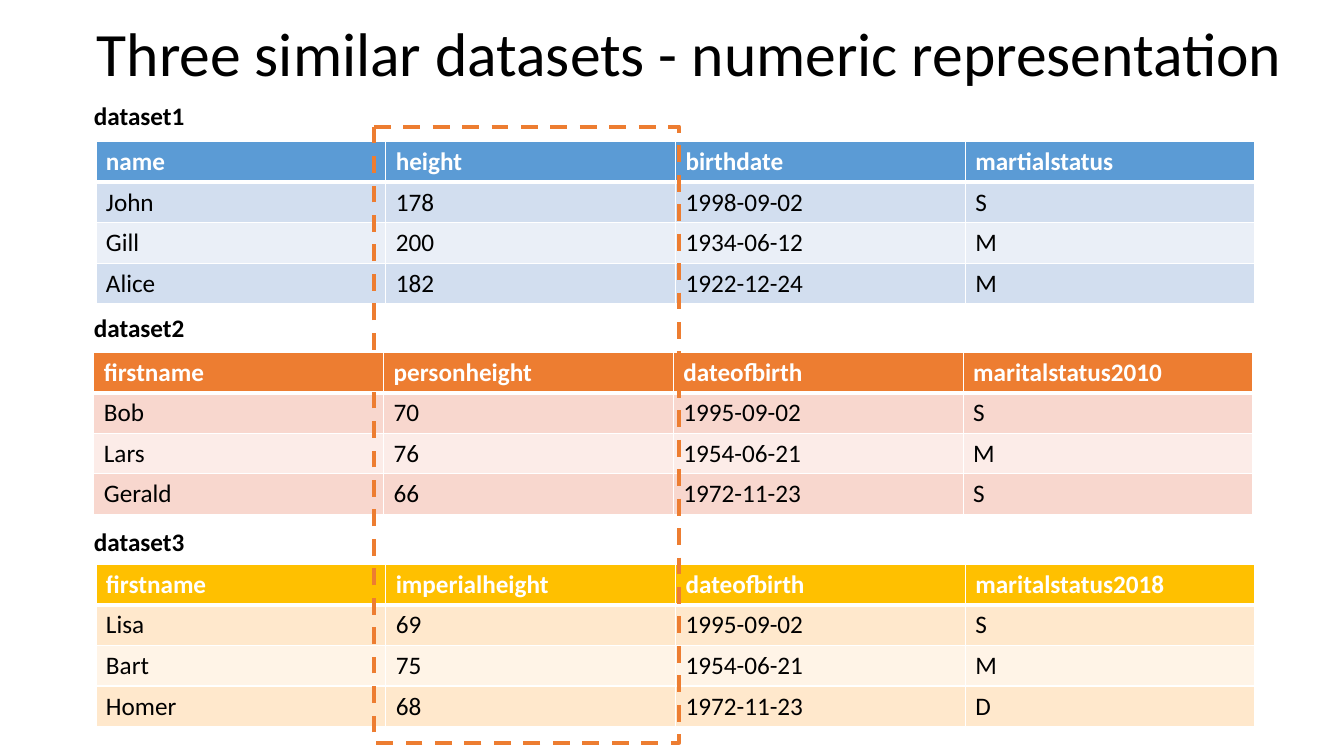
from lxml.etree import SubElement
from pptx import Presentation
from pptx.dml.color import RGBColor as RGB
from pptx.enum.dml import MSO_LINE as Dash
from pptx.enum.shapes import MSO_SHAPE as Shape
from pptx.enum.text import MSO_ANCHOR as Anchor
from pptx.oxml.ns import qn
from pptx.util import Pt

PX = 6350  # EMU, so the slide is 1920 x 1080 px
COL, ROW = 414, 58

WHITE, BLACK = RGB(255, 255, 255), RGB(0, 0, 0)
BLUE, BLUE_MID, BLUE_PALE = RGB(0x5B, 0x9B, 0xD5), RGB(0xD2, 0xDE, 0xEF), RGB(0xEA, 0xEF, 0xF7)
ORANGE, ORANGE_MID, ORANGE_PALE = RGB(0xED, 0x7D, 0x31), RGB(0xF8, 0xD7, 0xCE), RGB(0xFC, 0xEC, 0xE8)
GOLD, GOLD_MID, GOLD_PALE = RGB(0xFF, 0xC0, 0), RGB(0xFF, 0xE8, 0xCC), RGB(0xFF, 0xF4, 0xE7)

# label, label top, table left, table top, header and band colours, rows
SETS = [
    ("dataset1", 138, 137, 202, (BLUE, BLUE_MID, BLUE_PALE), [
        ("name", "height", "birthdate", "martialstatus"),
        ("John", "178", "1998-09-02", "S"),
        ("Gill", "200", "1934-06-12", "M"),
        ("Alice", "182", "1922-12-24", "M")]),
    ("dataset2", 441, 134, 503, (ORANGE, ORANGE_MID, ORANGE_PALE), [
        ("firstname", "personheight", "dateofbirth", "maritalstatus2010"),
        ("Bob", "70", "1995-09-02", "S"),
        ("Lars", "76", "1954-06-21", "M"),
        ("Gerald", "66", "1972-11-23", "S")]),
    ("dataset3", 747, 137, 806, (GOLD, GOLD_MID, GOLD_PALE), [
        ("firstname", "imperialheight", "dateofbirth", "maritalstatus2018"),
        ("Lisa", "69", "1995-09-02", "S"),
        ("Bart", "75", "1954-06-21", "M"),
        ("Homer", "68", "1972-11-23", "D")]),
]


class Deck:
    font = "Calibri"

    def __init__(self, wide, high):
        self.prs = Presentation()
        self.prs.slide_width, self.prs.slide_height = wide * PX, high * PX
        self.slide = self.prs.slides.add_slide(self.prs.slide_layouts[6])

    def box(self, *sides):
        return [side * PX for side in sides]

    def style(self, para, text, size, color, bold=False):
        para.text = text
        font = para.font
        font.name, font.size, font.bold = self.font, Pt(size), bold
        font.color.rgb = color

    def edge(self, cell, top, bottom):
        """Give the cell white borders, with top and bottom widths in points."""
        props = cell._tc.get_or_add_tcPr()
        for side, width in (("L", 1), ("R", 1), ("T", top), ("B", bottom)):
            line = SubElement(props, qn("a:ln" + side), w=str(Pt(width)))
            fill = SubElement(line, qn("a:solidFill"))
            SubElement(fill, qn("a:srgbClr"), val=str(WHITE))

    def grid(self, left, top, rows):
        """Add a plain table and yield its cells with row number and text."""
        cols = len(rows[0])
        spot = self.box(left, top, cols * COL, len(rows) * ROW)
        table = self.slide.shapes.add_table(len(rows), cols, *spot).table
        table.first_row = table.horz_banding = False
        for r, row in enumerate(rows):
            for c, text in enumerate(row):
                yield table.cell(r, c), r, text

    def table(self, left, top, colors, rows):
        head, mid, pale = colors
        for cell, r, text in self.grid(left, top, rows):
            self.edge(cell, 3 if r == 1 else 1, 3 if r == 0 else 1)
            cell.fill.solid()
            cell.fill.fore_color.rgb = head if r == 0 else mid if r % 2 else pale
            self.style(cell.text_frame.paragraphs[0], text, 18,
                       BLACK if r else WHITE, r == 0)

    def label(self, left, top, name):
        for cell, _, text in self.grid(left, top, [(name,)]):
            self.edge(cell, 1, 3)
            cell.fill.background()
            cell.margin_left = 0
            self.style(cell.text_frame.paragraphs[0], text, 18, BLACK, True)

    def title(self, text, *sides):
        frame = self.slide.shapes.add_textbox(*self.box(*sides)).text_frame
        frame.word_wrap = True
        frame.vertical_anchor = Anchor.MIDDLE
        para = frame.paragraphs[0]
        para.line_spacing = 0.9
        self.style(para, text, 44, BLACK)

    def frame(self, *sides):
        shape = self.slide.shapes.add_shape(Shape.ROUNDED_RECTANGLE, *self.box(*sides))
        shape.adjustments[0] = 0
        shape.shadow.inherit = False
        shape.fill.background()
        line = shape.line
        line.color.rgb, line.width, line.dash_style = ORANGE, Pt(3), Dash.DASH


def main():
    deck = Deck(1920, 1080)
    deck.title("Three similar datasets - numeric representation", 124, -24, 1767, 209)
    for name, high, left, top, colors, rows in SETS:
        deck.table(left, top, colors, rows)
        deck.label(134, high, name)
    deck.frame(534, 181, 436, 880)
    deck.prs.save("out.pptx")


if __name__ == "__main__":
    main()
